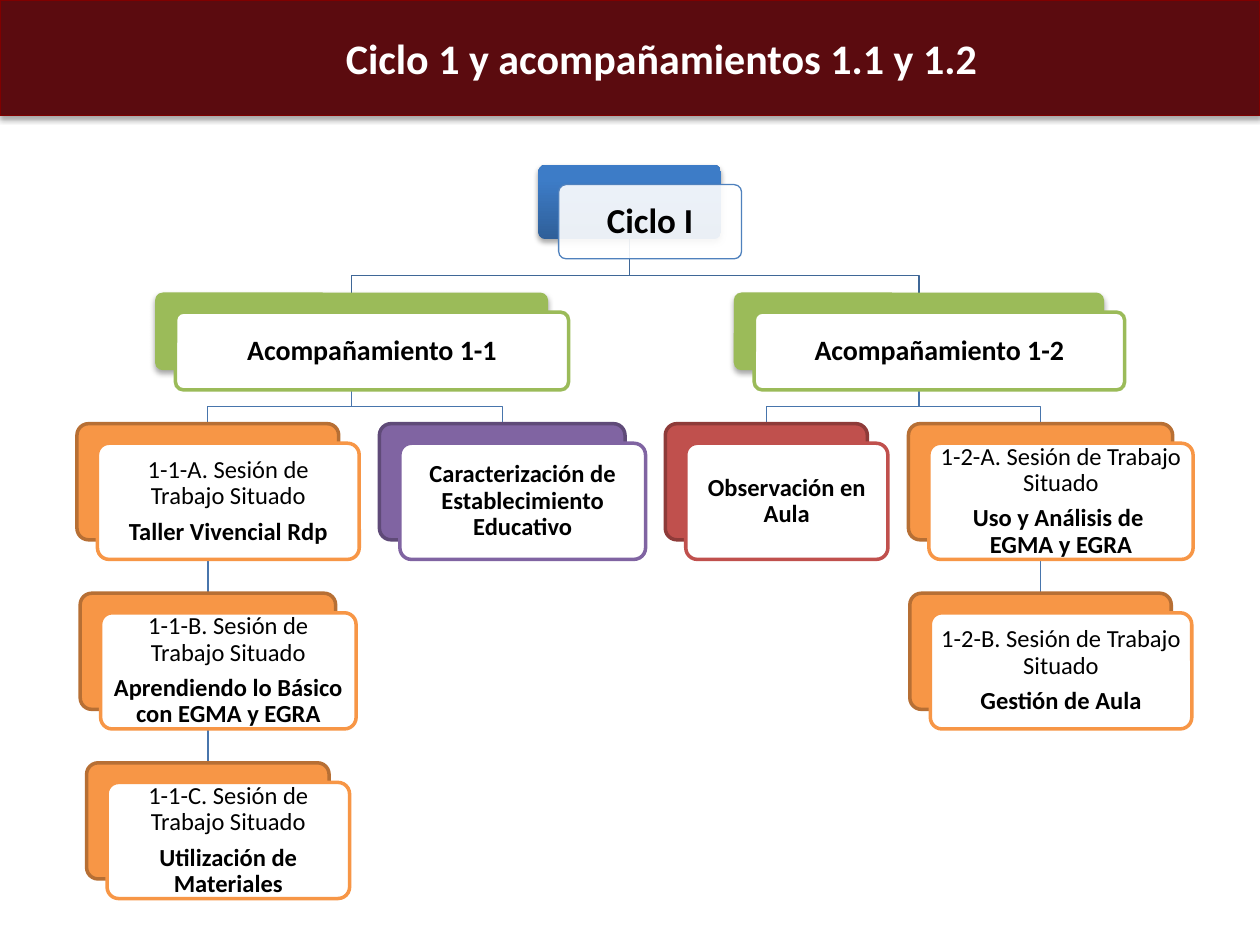
"""Build the slide showing cycle 1 as a tree of accompaniments and sessions."""
from dataclasses import dataclass
from itertools import accumulate
from typing import Optional

from lxml import etree
from pptx import Presentation
from pptx.dml.color import RGBColor
from pptx.enum.shapes import MSO_CONNECTOR, MSO_SHAPE
from pptx.enum.text import MSO_ANCHOR, MSO_AUTO_SIZE, PP_ALIGN
from pptx.oxml.ns import qn
from pptx.util import Pt

ROUND = MSO_SHAPE.ROUNDED_RECTANGLE
LINE = MSO_CONNECTOR.STRAIGHT
MID = MSO_ANCHOR.MIDDLE
CENTER = PP_ALIGN.CENTER
FIT = MSO_AUTO_SIZE.NONE
FONT = "Calibri"
COLORS = {
    "banner": "5B0B0F", "edge": "800000", "white": "FFFFFF", "black": "000000",
    "top": "3D7CC7", "base": "2F5F99", "blue": "4F81BD", "green": "9BBB59",
    "orange": "F79646", "rust": "B76F34", "purple": "8064A2", "plum": "5F4A78",
    "red": "C0504D", "wine": "8E3B39", "link": "4875AC", "trunk": "3F6797",
}
HIGHS = [42.4, 44.4, 66.4, 66.4, 66.4]
GAP = 30.5
TOPS = list(accumulate(HIGHS[:-1], lambda y, h: y + h + GAP, initial=94.3))
SIZES = [20, 16, 14, 14, 14]
PADS = [6, 4.8, 4.2, 4.2, 4.2]
BEND = 20.8
SHIFT = (11.7, 11.2)


@dataclass
class Node:
    """A two-layer box placed by its row and the middle of its back layer."""
    row: int
    mid: float
    wide: float
    fill: str
    rim: Optional[str]
    bold: str
    plain: str = ""
    up: Optional["Node"] = None


def paint(color, name: str) -> None:
    """Set a colour format from the palette."""
    color.rgb = RGBColor.from_string(COLORS[name])


def coat(shape, fill: str, rim: Optional[str], width: float) -> None:
    """Give a shape a flat fill and an optional outline."""
    shape.shadow.inherit = False
    shape.fill.solid()
    paint(shape.fill.fore_color, fill)
    stroke(shape, rim, width)


def stroke(shape, rim: Optional[str], width: float) -> None:
    """Outline a shape, or remove its outline."""
    if rim is None:
        shape.line.fill.background()
        return
    paint(shape.line.color, rim)
    shape.line.width = Pt(width)


def shade(shape) -> None:
    """Add a soft shadow below a shape."""
    box = shape._element.spPr.find(qn("a:effectLst"))
    drop = etree.SubElement(box, qn("a:outerShdw"), blurRad=str(Pt(3.1)),
                            dist=str(Pt(1.8)), dir="5400000", rotWithShape="0")
    tone = etree.SubElement(drop, qn("a:srgbClr"), val=COLORS["black"])
    etree.SubElement(tone, qn("a:alpha"), val="35000")


def style(para, size: float, color: str, bold: bool) -> None:
    """Centre a paragraph and format its runs."""
    para.alignment = CENTER
    for run in para.runs:
        run.font.name, run.font.size, run.font.bold = FONT, Pt(size), bold
        paint(run.font.color, color)


def banner(slide, text: str) -> None:
    """Turn the title placeholder into the top band."""
    title = slide.shapes.title
    title.left, title.top, title.width, title.height = 0, 0, Pt(720), Pt(66.2)
    coat(title, "banner", "edge", 0.75)
    shade(title)
    frame = title.text_frame
    frame.text = text
    frame.auto_size, frame.vertical_anchor = FIT, MID
    para = frame.paragraphs[0]
    style(para, 24, "white", True)
    para._p.get_or_add_pPr().set("marL", str(Pt(36)))


def link(slide, node: Node) -> None:
    """Join a node to its parent, with a bend when they are not aligned."""
    up = node.up
    start, end = TOPS[up.row] + HIGHS[up.row], TOPS[node.row]
    if up.mid == node.mid:
        wire = slide.shapes.add_connector(
            LINE, Pt(up.mid), Pt(start), Pt(node.mid), Pt(end))
        etree.SubElement(wire._element.spPr, qn("a:effectLst"))
    else:
        path = slide.shapes.build_freeform(Pt(up.mid), Pt(start))
        turn = Pt(start + BEND)
        path.add_line_segments([(Pt(up.mid), turn), (Pt(node.mid), turn),
                                (Pt(node.mid), Pt(end))], close=False)
        wire = path.convert_to_shape()
        wire.fill.background()
        wire.shadow.inherit = False
    stroke(wire, "trunk" if up.row == 0 else "link", 0.75)


def layer(slide, node: Node, dx: float, dy: float):
    """Add one rounded layer of a node."""
    shape = slide.shapes.add_shape(
        ROUND, Pt(node.mid - node.wide / 2 + dx), Pt(TOPS[node.row] + dy),
        Pt(node.wide), Pt(HIGHS[node.row]))
    shape.adjustments[0] = 0.1
    return shape


def draw(slide, node: Node) -> None:
    """Draw the coloured back layer and the labelled front layer."""
    back = layer(slide, node, 0, 0)
    coat(back, node.fill, node.rim, 2)
    if node.rim is None:
        shade(back)
    front = layer(slide, node, *SHIFT)
    coat(front, "white", node.fill, 0.75 if node.row == 0 else 2)
    if node.row == 0:
        back.fill.gradient()
        back.fill.gradient_angle = 90
        for stop, name, pos in zip(back.fill.gradient_stops, ("base", "top"), (0, 0.8)):
            paint(stop.color, name)
            stop.position = pos
        tone = front._element.spPr.find(qn("a:solidFill"))[0]
        etree.SubElement(tone, qn("a:alpha"), val="90000")
    label(front.text_frame, node)


def label(frame, node: Node) -> None:
    """Write the plain and bold lines of a node."""
    frame.word_wrap, frame.auto_size, frame.vertical_anchor = True, FIT, MID
    pad = Pt(PADS[node.row])
    frame.margin_left = frame.margin_right = pad
    frame.margin_top = frame.margin_bottom = pad
    lines = [(text, bold) for text, bold in ((node.plain, False), (node.bold, True)) if text]
    for i, (text, bold) in enumerate(lines):
        para = frame.add_paragraph() if i else frame.paragraphs[0]
        para.text = text
        para.line_spacing = 0.9
        if i:
            para.space_before = Pt(5)
        style(para, SIZES[node.row], "black", bold)


def session(row: int, mid: float, wide: float, code: str, name: str, up: Node) -> Node:
    """Make an orange node for a work session."""
    return Node(row, mid, wide, "orange", "rust", name,
                f"{code}. Sesión de Trabajo Situado", up)


def tree() -> list[Node]:
    """List the nodes, parents first."""
    root = Node(0, 359.8, 104.5, "blue", None, "Ciclo I")
    one = Node(1, 200.9, 224.6, "green", None, "Acompañamiento 1-1", up=root)
    two = Node(1, 525.1, 211.6, "green", None, "Acompañamiento 1-2", up=root)
    a = session(2, 118.8, 149.6, "1-1-A", "Taller Vivencial Rdp", one)
    b = session(3, 118.8, 146, "1-1-B", "Aprendiendo lo Básico con EGMA y EGRA", a)
    c = session(4, 118.8, 138.6, "1-1-C", "Utilización de Materiales", b)
    school = Node(2, 287, 140.4, "purple", "plum",
                  "Caracterización de Establecimiento Educativo", up=one)
    watch = Node(2, 437.9, 115.5, "red", "wine", "Observación en Aula", up=two)
    d = session(2, 594.6, 151, "1-2-A", "Uso y Análisis de \vEGMA y EGRA", two)
    e = session(3, 594.6, 149.4, "1-2-B", "Gestión de Aula", d)
    return [root, one, a, b, c, school, two, watch, d, e]


def main() -> None:
    """Build and save the deck."""
    deck = Presentation()
    deck.slide_width, deck.slide_height = Pt(720), Pt(540)
    slide = deck.slides.add_slide(deck.slide_layouts[5])
    banner(slide, "Ciclo 1 y acompañamientos 1.1 y 1.2")
    nodes = tree()
    for node in nodes[1:]:
        link(slide, node)
    for node in nodes:
        draw(slide, node)
    deck.save("out.pptx")


if __name__ == "__main__":
    main()
